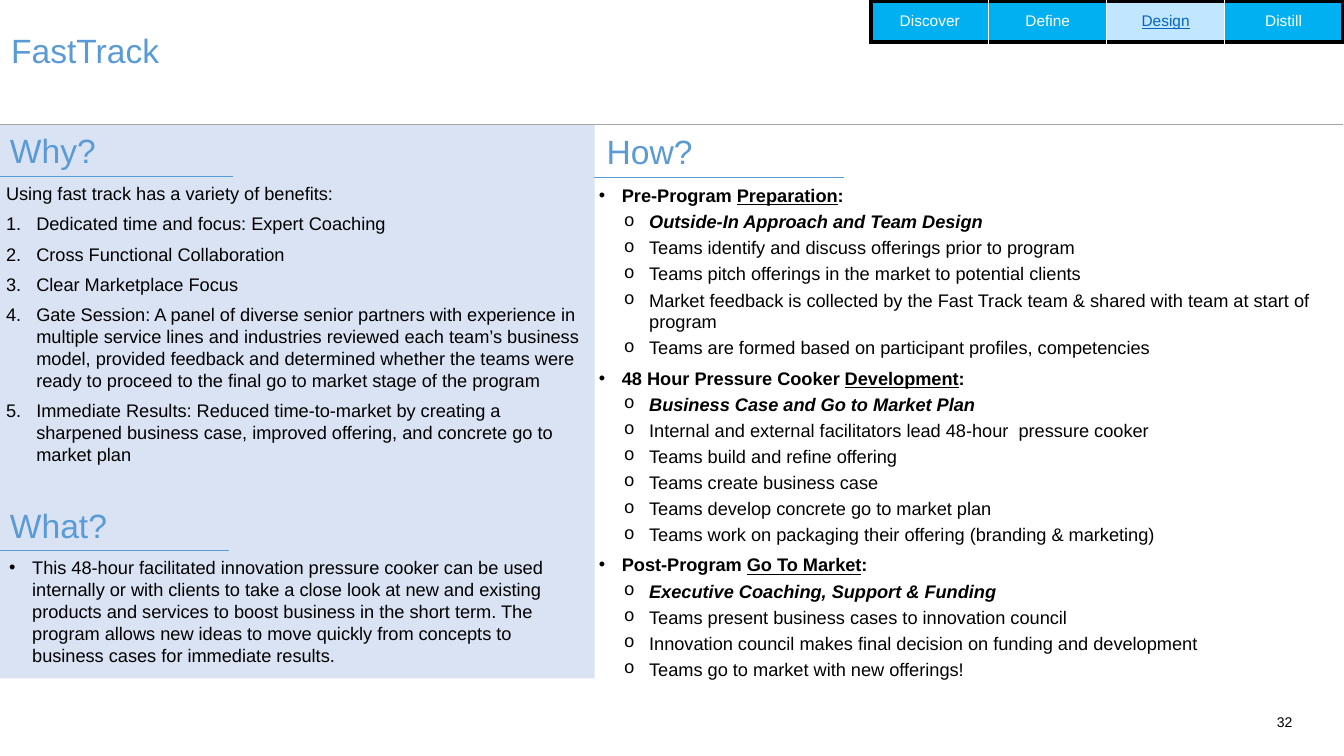
from pptx import Presentation
from pptx.dml.color import RGBColor
from pptx.enum.shapes import MSO_CONNECTOR, MSO_SHAPE
from pptx.enum.text import MSO_ANCHOR, MSO_AUTO_SIZE, PP_ALIGN
from pptx.oxml.ns import qn
from pptx.util import Pt
from lxml import etree

LEFT, CENTER, RIGHT = PP_ALIGN.LEFT, PP_ALIGN.CENTER, PP_ALIGN.RIGHT
TOP, MIDDLE = MSO_ANCHOR.TOP, MSO_ANCHOR.MIDDLE
NO_FIT = MSO_AUTO_SIZE.NONE
STRAIGHT, RECT = MSO_CONNECTOR.STRAIGHT, MSO_SHAPE.RECTANGLE

BLACK = RGBColor(0x00, 0x00, 0x00)
WHITE = RGBColor(0xFF, 0xFF, 0xFF)
BLUE = RGBColor(0x5B, 0x9B, 0xD5)
PALE = RGBColor(0xDA, 0xE3, 0xF3)
GRAY = RGBColor(0xA6, 0xA6, 0xA6)
CYAN = RGBColor(0x00, 0xB0, 0xF0)
ACTIVE = RGBColor(0xC0, 0xE7, 0xFF)
LINK = RGBColor(0x05, 0x63, 0xC1)

TITLE = "FastTrack"
PAGE = "32"
STAGES = ["Discover", "Define", "Design", "Distill"]
CURRENT = "Design"
WHY_INTRO = "Using fast track has a variety of benefits:"
WHY = [
    "Dedicated time and focus: Expert Coaching",
    "Cross Functional Collaboration",
    "Clear Marketplace Focus",
    "Gate Session: A panel of diverse senior partners with experience in multiple service lines and "
    "industries reviewed each team’s business model, provided feedback and determined whether the "
    "teams were ready to proceed to the final go to market stage of the program",
    "Immediate Results: Reduced time-to-market by creating a sharpened business case, improved "
    "offering, and concrete go to market plan",
]
WHAT = (
    "This 48-hour facilitated innovation pressure cooker can be used internally or with clients to "
    "take a close look at new and existing products and services to boost business in the short term. "
    "The program allows new ideas to move quickly from concepts to business cases for immediate results."
)
HOW = [
    ("Pre-Program ", "Preparation", "Outside-In Approach and Team Design", [
        "Teams identify and discuss offerings prior to program",
        "Teams pitch offerings in the market to potential clients",
        "Market feedback is collected by the Fast Track team & shared with team at start of program",
        "Teams are formed based on participant profiles, competencies",
    ]),
    ("48 Hour Pressure Cooker ", "Development", "Business Case and Go to Market Plan", [
        "Internal and external facilitators lead 48-hour  pressure cooker",
        "Teams build and refine offering",
        "Teams create business case",
        "Teams develop concrete go to market plan",
        "Teams work on packaging their offering (branding & marketing)",
    ]),
    ("Post-Program ", "Go To Market", "Executive Coaching, Support & Funding", [
        "Teams present business cases to innovation council",
        "Innovation council makes final decision on funding and development",
        "Teams go to market with new offerings!",
    ]),
]
HEADINGS = [("Why?", 0, 89.3), ("What?", 0, 357.1), ("How?", 426.2, 90)]
RULES = [
    (-1.5, 166.5, 126.3, BLUE),
    (-1.5, 163.4, 393.1, BLUE),
    (424.1, 602.6, 126.7, BLUE),
    (-1.5, 959, 88.6, GRAY),
]

BODY = {"size": Pt(13), "bold": False, "italic": False}
HEAD = {"size": Pt(24), "color": BLUE}
DOT = ("a:buChar", {"char": "•"}, 16.5, 16.5)
RING = ("a:buChar", {"char": "o"}, 36, 18)
NUMBER = ("a:buAutoNum", {"type": "arabicPeriod"}, 21.6, 21.6)
PLAIN = ("a:buNone", {}, 0, 0)


def add_run(p, text, color=BLACK, **fmt):
    r = p.add_run()
    r.text = text
    r.font.name = "Arial"
    r.font.color.rgb = color
    for key, value in fmt.items():
        setattr(r.font, key, value)


def place(sp, left, top, width, height):
    sp.left, sp.top, sp.width, sp.height = Pt(left), Pt(top), Pt(width), Pt(height)
    tf = sp.text_frame
    tf.word_wrap = True
    tf.auto_size = NO_FIT
    tf.vertical_anchor = TOP
    return tf


def fill_list(tf, items):
    for i, (bullet, after, runs) in enumerate(items):
        p = tf.add_paragraph() if i else tf.paragraphs[0]
        tag, attrs, margin, hang = bullet
        p.level = int(bullet is RING)
        fmt = {"alignment": LEFT, "space_before": Pt(0), "space_after": Pt(after), "line_spacing": 1.0}
        for key, value in fmt.items():
            setattr(p, key, value)
        pPr = p._p.get_or_add_pPr()
        pPr.set("marL", str(Pt(margin)))
        pPr.set("indent", str(-Pt(hang)))
        if bullet is not PLAIN:
            etree.SubElement(pPr, qn("a:buFont"), typeface="Courier New" if bullet is RING else "Arial")
        etree.SubElement(pPr, qn(tag), attrs)
        for text, extra in runs:
            add_run(p, text, **{**BODY, **extra})


def how_items():
    items = []
    for lead, key, theme, steps in HOW:
        strong = {"bold": True}
        items.append((DOT, 3, [(lead, strong), (key, {"bold": True, "underline": True}), (":", strong)]))
        items.append((RING, 3, [(theme, {"bold": True, "italic": True})]))
        items += [(RING, 6 if step == steps[-1] else 3, [(step, {})]) for step in steps]
    return items


def add_border(cell, side, color, width):
    ln = etree.SubElement(cell._tc.get_or_add_tcPr(), qn("a:" + side), w=str(Pt(width)))
    fill = etree.SubElement(ln, qn("a:solidFill"))
    etree.SubElement(fill, qn("a:srgbClr"), val=str(color))


def add_stages(slide):
    tbl = slide.shapes.add_table(1, len(STAGES), Pt(622), Pt(0.7), Pt(337), Pt(29.4)).table
    last = len(STAGES) - 1
    for i, stage in enumerate(STAGES):
        cell = tbl.cell(0, i)
        add_border(cell, "lnL", *((WHITE, 1) if i else (BLACK, 3)))
        add_border(cell, "lnR", *((WHITE, 1) if i < last else (BLACK, 3)))
        add_border(cell, "lnT", BLACK, 3)
        add_border(cell, "lnB", BLACK, 3)
        active = stage == CURRENT
        cell.fill.solid()
        cell.fill.fore_color.rgb = ACTIVE if active else CYAN
        cell.vertical_anchor = MIDDLE
        p = cell.text_frame.paragraphs[0]
        p.alignment = CENTER
        add_run(p, stage, LINK if active else WHITE, size=Pt(11), bold=False, underline=active)


def main():
    prs = Presentation()
    prs.slide_width, prs.slide_height = Pt(960), Pt(540)
    slide = prs.slides.add_slide(prs.slide_layouts[4])
    shapes = slide.shapes
    ph = {sp.placeholder_format.idx: sp for sp in slide.placeholders}
    ph[3]._element.getparent().remove(ph[3]._element)

    panel = shapes.add_shape(RECT, Pt(0), Pt(88.6), Pt(424.8), Pt(396))
    panel.shadow.inherit = False
    panel.fill.solid()
    panel.fill.fore_color.rgb = PALE
    panel.line.fill.background()
    shapes._spTree.insert(2, panel._element)

    tf = place(ph[0], 0.7, 18, 587.5, 36)
    tf.vertical_anchor = MIDDLE
    tf.paragraphs[0].alignment = LEFT
    add_run(tf.paragraphs[0], TITLE, **HEAD)

    for text, left, top in HEADINGS:
        tf = place(shapes.add_textbox(0, 0, 0, 0), left, top, 90, 36.7)
        add_run(tf.paragraphs[0], text, **HEAD)

    for x1, x2, y, color in RULES:
        line = shapes.add_connector(STRAIGHT, Pt(x1), Pt(y), Pt(x2), Pt(y))
        line.line.color.rgb = color
        line.line.width = Pt(0.5)
        etree.SubElement(line._element.spPr, qn("a:effectLst"))

    why = [(PLAIN, 6, [(WHY_INTRO, {})])] + [(NUMBER, 6, [(text, {})]) for text in WHY]
    fill_list(place(ph[2], -2.9, 126.7, 425.5, 211), why)
    fill_list(place(ph[1], -0.7, 393.8, 425.5, 85.7), [(DOT, 0, [(WHAT, {})])])
    fill_list(place(ph[4], 420.5, 128.2, 545, 364.3), how_items())

    add_stages(slide)

    tf = place(shapes.add_textbox(0, 0, 0, 0), 898.6, 509.8, 24.5, 12.2)
    tf.margin_left = tf.margin_right = tf.margin_top = tf.margin_bottom = 0
    tf.paragraphs[0].alignment = RIGHT
    add_run(tf.paragraphs[0], PAGE, size=Pt(10))
    prs.save("out.pptx")


if __name__ == "__main__":
    main()
